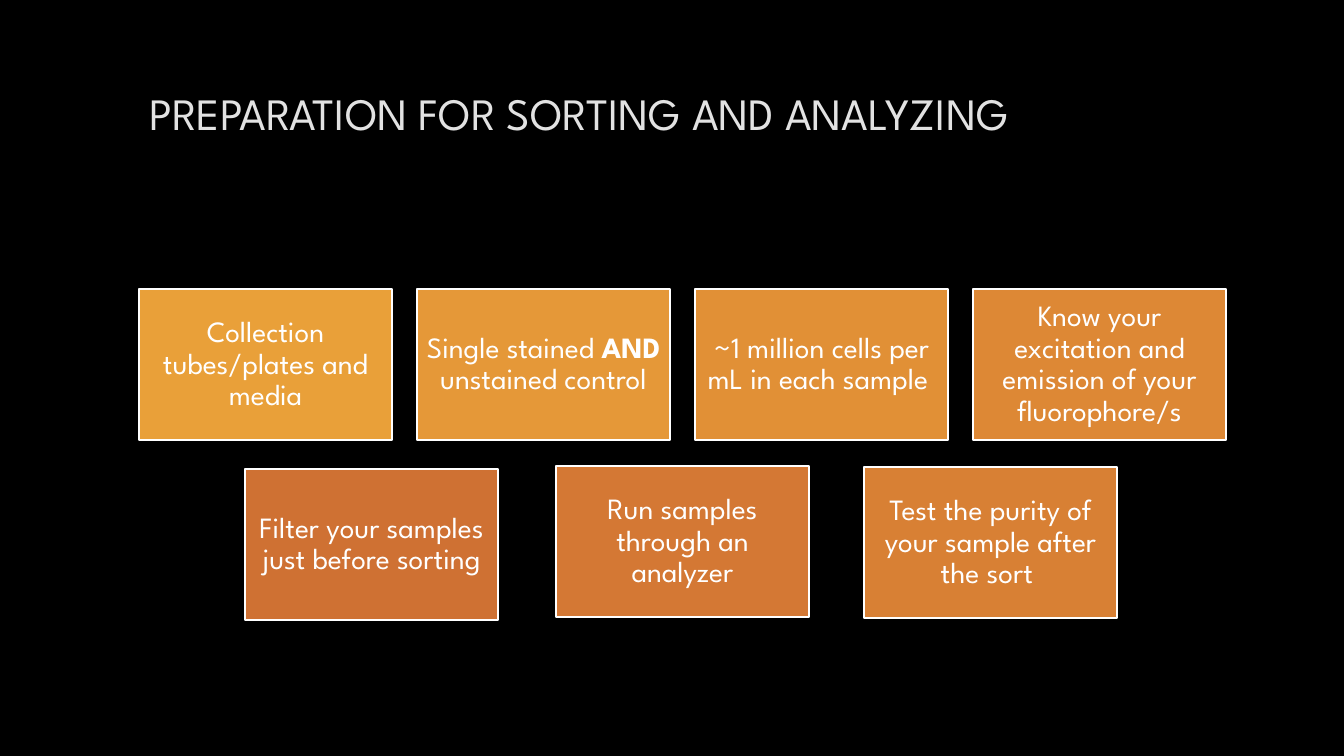
import pptx
import pptx.dml.color
import pptx.enum.shapes
import pptx.enum.text
import pptx.util

RGBColor = pptx.dml.color.RGBColor
BLACK = RGBColor(0x00, 0x00, 0x00)
WHITE = RGBColor(0xFF, 0xFF, 0xFF)
TITLE_GREY = RGBColor(0xE2, 0xE2, 0xE2)
AMBER = RGBColor(0xE9, 0xA0, 0x39)
HONEY = RGBColor(0xE5, 0x98, 0x38)
APRICOT = RGBColor(0xE1, 0x90, 0x36)
ORANGE = RGBColor(0xDD, 0x88, 0x35)
PUMPKIN = RGBColor(0xD8, 0x80, 0x34)
COPPER = RGBColor(0xD4, 0x78, 0x34)
RUST = RGBColor(0xCF, 0x71, 0x33)

EMU_PER_PX = 914400 / 100.8
SLIDE_WIDTH, SLIDE_HEIGHT = 1344, 756
LEFT_MARGIN = 139
CONTENT_WIDTH = 1087
STEP_WIDTH, STEP_HEIGHT = 253, 151
TOP_ROW, STEP_PITCH = 289, 278

# Each step is its fill and its text pieces; every second piece is bold.
PREPARATION_STEPS = [
    (AMBER, ["Collection tubes/plates and media"]),
    (HONEY, ["Single stained ", "AND", " unstained control"]),
    (APRICOT, ["~1 million cells per mL in each sample "]),
    (ORANGE, ["Know your excitation and emission of your fluorophore/s"]),
]
SORTING_STEPS = [
    (864, 467, PUMPKIN, ["Test the purity of your sample after the sort "]),
    (556, 466, COPPER, ["Run samples through an analyzer"]),
    (245, 469, RUST, ["Filter your samples just before sorting"]),
]


def px(length):
    return pptx.util.Emu(round(length * EMU_PER_PX))


class StepSlide:
    font_name = "League Spartan"
    title_size = 32
    step_size = 21

    def __init__(self, presentation):
        self.slide = presentation.slides.add_slide(presentation.slide_layouts[5])
        background = self.slide.background.fill
        background.solid()
        background.fore_color.rgb = BLACK

    def style_run(self, run, size, color, bold=False):
        run.font.name = self.font_name
        run.font.size = pptx.util.Pt(size)
        run.font.color.rgb = color
        run.font.bold = bold

    def title(self, text, left, top, width, height):
        heading = self.slide.shapes.title
        heading.left, heading.top = px(left), px(top)
        heading.width, heading.height = px(width), px(height)
        frame = heading.text_frame
        frame.text = text
        frame.vertical_anchor = pptx.enum.text.MSO_ANCHOR.MIDDLE
        paragraph = frame.paragraphs[0]
        paragraph.alignment = pptx.enum.text.PP_ALIGN.LEFT
        self.style_run(paragraph.runs[0], self.title_size, TITLE_GREY)

    def step(self, left, top, fill, pieces):
        box = self.slide.shapes.add_shape(
            pptx.enum.shapes.MSO_SHAPE.RECTANGLE,
            px(left), px(top), px(STEP_WIDTH), px(STEP_HEIGHT))
        box.shadow.inherit = False
        box.fill.solid()
        box.fill.fore_color.rgb = fill
        box.line.color.rgb = WHITE
        box.line.width = pptx.util.Pt(2)

        frame = box.text_frame
        frame.word_wrap = True
        frame.vertical_anchor = pptx.enum.text.MSO_ANCHOR.MIDDLE
        frame.margin_left = frame.margin_right = px(9)
        frame.margin_top = frame.margin_bottom = px(9)
        paragraph = frame.paragraphs[0]
        paragraph.alignment = pptx.enum.text.PP_ALIGN.CENTER
        paragraph.line_spacing = 0.9
        for index, piece in enumerate(pieces):
            run = paragraph.add_run()
            run.text = piece
            self.style_run(run, self.step_size, WHITE, bold=index % 2 == 1)


def main():
    presentation = pptx.Presentation()
    presentation.slide_width = px(SLIDE_WIDTH)
    presentation.slide_height = px(SLIDE_HEIGHT)

    preparation = StepSlide(presentation)
    preparation.title("PREPARATION FOR SORTING AND ANALYZING",
                      LEFT_MARGIN, 40, CONTENT_WIDTH, 146)
    for column, (fill, pieces) in enumerate(PREPARATION_STEPS):
        preparation.step(LEFT_MARGIN + column * STEP_PITCH, TOP_ROW, fill, pieces)
    for left, top, fill, pieces in SORTING_STEPS:
        preparation.step(left, top, fill, pieces)

    presentation.save("out.pptx")


if __name__ == "__main__":
    main()
